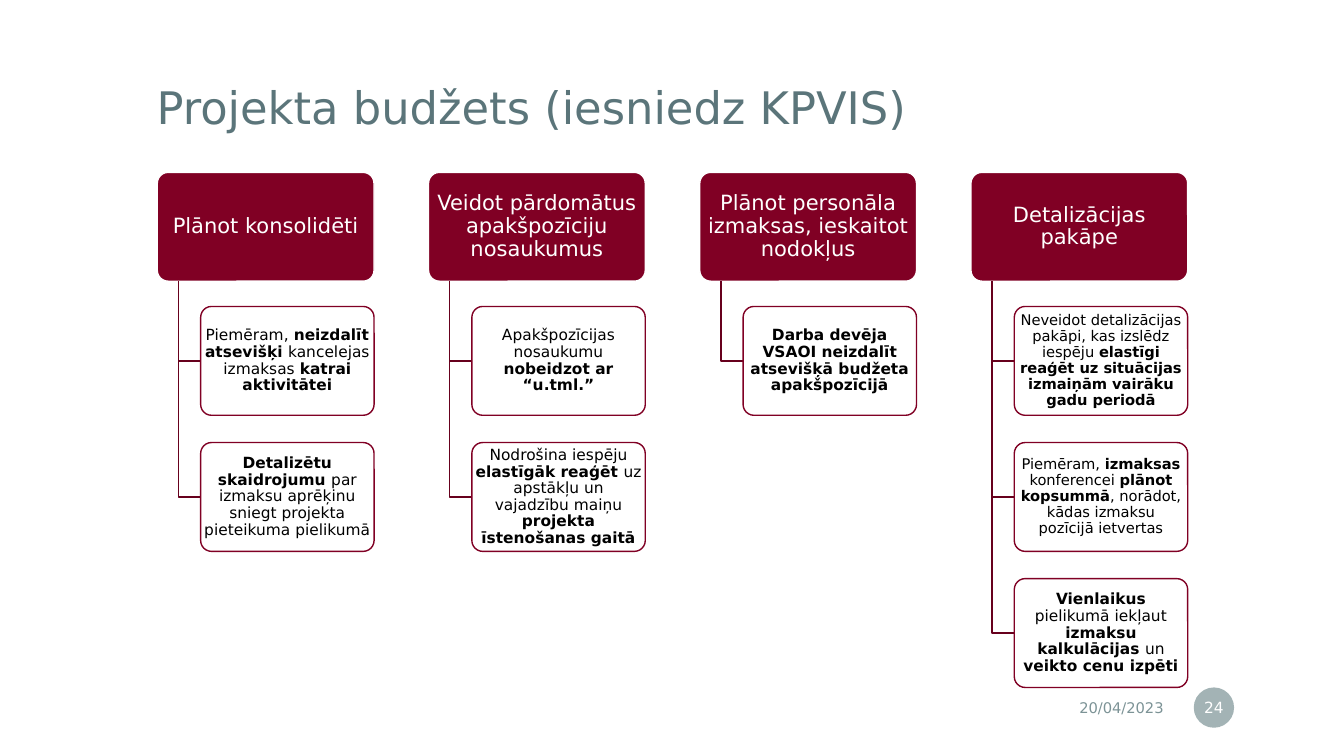
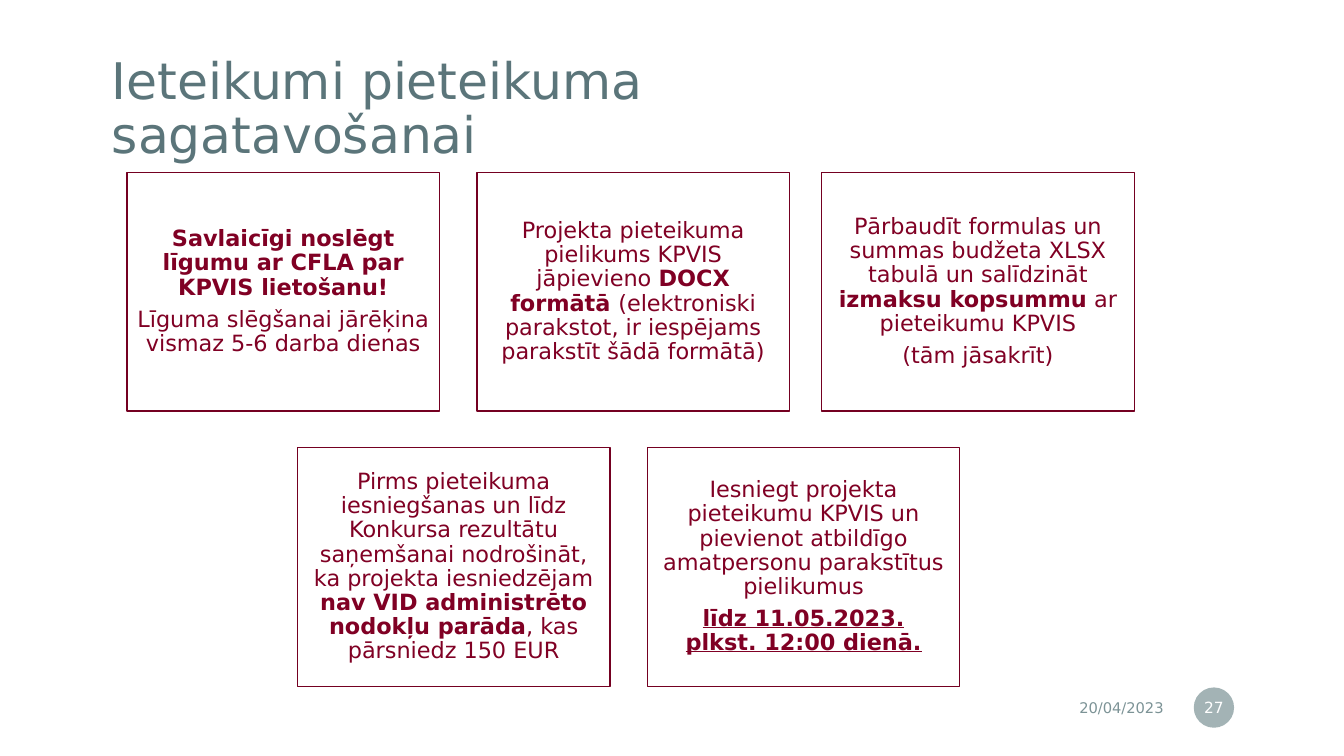
from lxml import etree
from pptx import Presentation
from pptx.dml.color import RGBColor
from pptx.enum.shapes import MSO_SHAPE
from pptx.enum.text import MSO_ANCHOR, MSO_AUTO_SIZE, PP_ALIGN
from pptx.oxml.ns import qn
from pptx.util import Inches, Pt

LEFT, CENTER, RIGHT = PP_ALIGN.LEFT, PP_ALIGN.CENTER, PP_ALIGN.RIGHT
MIDDLE, NO_FIT = MSO_ANCHOR.MIDDLE, MSO_AUTO_SIZE.NONE
RECTANGLE, ROUNDED, OVAL = MSO_SHAPE.RECTANGLE, MSO_SHAPE.ROUNDED_RECTANGLE, MSO_SHAPE.OVAL

WHITE = RGBColor(0xFF, 0xFF, 0xFF)
BLACK = RGBColor(0x00, 0x00, 0x00)
SLATE = RGBColor(0x5B, 0x75, 0x7A)
GREY = RGBColor(0x7C, 0x93, 0x96)
WINE = RGBColor(0x80, 0x00, 0x24)
WINE_BRANCH = RGBColor(0x67, 0x00, 0x1D)
WINE_BORDER = RGBColor(0x74, 0x00, 0x21)
FONT = "DejaVu Sans"


def write_text(shape, paragraphs, size, color, align=CENTER, margins=(0, 0), spacing=0.9, wrap=True):
    """Fill a shape with text; *stars* mark bold, _underscores_ underlined bold lines."""
    frame = shape.text_frame
    across, down = (Inches(margin) for margin in margins)
    frame_format = {"word_wrap": wrap, "auto_size": NO_FIT, "vertical_anchor": MIDDLE,
                    "margin_left": across, "margin_right": across,
                    "margin_top": down, "margin_bottom": down}
    for name, value in frame_format.items():
        setattr(frame, name, value)
    for index, text in enumerate(paragraphs):
        para = frame.add_paragraph() if index else frame.paragraphs[0]
        para.alignment = align
        para.line_spacing = spacing
        para.space_before = Pt(0.35 * size if index else 0)
        underlined = text.startswith("_")
        for line_index, line in enumerate(text.strip("_").split("\n")):
            if line_index:
                para.add_line_break()
            for part_index, part in enumerate(line.split("*")):
                if not part:
                    continue
                span = para.add_run()
                span.text = part
                span_format = {"name": FONT, "size": Pt(size), "underline": underlined,
                               "bold": underlined or part_index % 2 == 1}
                for name, value in span_format.items():
                    setattr(span.font, name, value)
                span.font.color.rgb = color


def add_box(page, kind, left, top, width, height, fill, line=None):
    """Add a flat preset shape with an optional one-point outline."""
    box = page.shapes.add_shape(kind, Inches(left), Inches(top), Inches(width), Inches(height))
    box.shadow.inherit = False
    box.fill.solid()
    box.fill.fore_color.rgb = fill
    if line is None:
        box.line.fill.background()
    else:
        box.line.color.rgb = line
        box.line.width = Pt(1)
    if kind == ROUNDED:
        box.adjustments[0] = 0.1
    return box


deck = Presentation()
deck.slide_width, deck.slide_height = Inches(13.33), Inches(7.5)

# Shared title, date and page number
headings = [
    ("Projekta budžets (iesniedz KPVIS)", "24",
     {"size": 32, "align": CENTER, "margins": (0, 0.2), "wrap": False}),
    ("Ieteikumi pieteikuma sagatavošanai", "27",
     {"size": 36, "align": LEFT, "margins": (0.2, 0.2)}),
]
for heading, number, title_format in headings:
    page = deck.slides.add_slide(deck.slide_layouts[5])
    title = page.shapes.title
    title.left, title.top = Inches(0.91), Inches(0.48)
    title.width, title.height = Inches(8.73), Inches(1.23)
    write_text(title, [heading], color=SLATE, **title_format)

    date = page.shapes.add_textbox(Inches(8.63), Inches(6.84), Inches(3.01), Inches(0.35))
    write_text(date, ["20/04/2023"], 10.5, GREY, RIGHT, (0.1, 0.05), 1.0)

    badge = add_box(page, OVAL, 11.84, 6.82, 0.4, 0.4, GREY)
    badge_color = badge.fill._xPr.find(qn("a:solidFill"))[0]
    etree.SubElement(badge_color, qn("a:alpha"), val="70000")
    write_text(badge, [number], 11, WHITE, CENTER, (0.02, 0.05), 1.0)

budget_page, advice_page = deck.slides

# Budget: four headers, each with its branch of detail boxes
COLUMN_LEFT, COLUMN_STEP = 1.56, 2.69
HEADER_TOP, HEADER_WIDTH, BOX_HEIGHT = 1.71, 2.15, 1.08
DETAIL_TOP, DETAIL_STEP, DETAIL_WIDTH = 3.04, 1.35, 1.72
TRUNK_INDENT, DETAIL_INDENT = 0.21, 0.43

columns = [
    ("Plānot konsolidēti", [
        ("Piemēram, *neizdalīt atsevišķi *kancelejas izmaksas *katrai aktivitātei*", 11),
        ("*Detalizētu skaidrojumu *par izmaksu aprēķinu sniegt projekta pieteikuma pielikumā", 11),
    ]),
    ("Veidot pārdomātus apakšpozīciju nosaukumus", [
        ("Apakšpozīcijas nosaukumu *nobeidzot ar “u.tml.”*", 11),
        ("Nodrošina iespēju *elastīgāk reaģēt *uz apstākļu un vajadzību maiņu "
         "*projekta īstenošanas gaitā*", 11),
    ]),
    ("Plānot personāla izmaksas, ieskaitot nodokļus", [
        ("*Darba devēja VSAOI neizdalīt atsevišķā budžeta apakšpozīcijā*", 11),
    ]),
    ("Detalizācijas pakāpe", [
        ("Neveidot detalizācijas pakāpi, kas izslēdz iespēju "
         "*elastīgi reaģēt uz situācijas izmaiņām vairāku gadu periodā*", 10.5),
        ("Piemēram, *izmaksas* konferencei *plānot kopsummā*, "
         "norādot, kādas izmaksu pozīcijā ietvertas", 10.5),
        ("*Vienlaikus* pielikumā iekļaut *izmaksu kalkulācijas *un *veikto cenu izpēti*", 11),
    ]),
]
for column, (header_text, details) in enumerate(columns):
    left = COLUMN_LEFT + column * COLUMN_STEP
    header = add_box(budget_page, ROUNDED, left, HEADER_TOP, HEADER_WIDTH, BOX_HEIGHT, WINE, WHITE)
    write_text(header, [header_text], 15, WHITE, margins=(0.03, 0.02))
    trunk_left, detail_left = left + TRUNK_INDENT, left + DETAIL_INDENT
    trunk_top = HEADER_TOP + BOX_HEIGHT
    for row, (detail_text, size) in enumerate(details):
        top = DETAIL_TOP + row * DETAIL_STEP
        middle = top + BOX_HEIGHT / 2
        builder = budget_page.shapes.build_freeform(Inches(trunk_left), Inches(trunk_top))
        builder.add_line_segments([(Inches(trunk_left), Inches(middle)),
                                   (Inches(detail_left), Inches(middle))], close=False)
        branch = builder.convert_to_shape()
        branch.shadow.inherit = False
        branch.fill.background()
        branch.line.color.rgb = WINE_BRANCH
        branch.line.width = Pt(1)
        detail = add_box(budget_page, ROUNDED, detail_left, top, DETAIL_WIDTH, BOX_HEIGHT, WHITE, WINE)
        write_text(detail, [detail_text], size, BLACK)

# Advice: three cards above two
CARD_WIDTH, CARD_HEIGHT = 3.1, 2.37
UPPER, LOWER = 1.71, 4.44
cards = [
    (1.26, UPPER, ["*Savlaicīgi noslēgt līgumu ar CFLA par KPVIS lietošanu!*",
                   "Līguma slēgšanai jārēķina vismaz 5-6 darba dienas"]),
    (4.73, UPPER, ["Projekta pieteikuma pielikums KPVIS jāpievieno *DOCX formātā *"
                   "(elektroniski parakstot, ir iespējams parakstīt šādā formātā)"]),
    (8.15, UPPER, ["Pārbaudīt formulas un summas budžeta XLSX tabulā un salīdzināt "
                   "*izmaksu kopsummu* ar pieteikumu KPVIS",
                   "(tām jāsakrīt)"]),
    (2.95, LOWER, ["Pirms pieteikuma iesniegšanas un līdz Konkursa rezultātu saņemšanai "
                   "nodrošināt, ka projekta iesniedzējam "
                   "*nav VID administrēto nodokļu parāda*, kas pārsniedz 150 EUR"]),
    (6.42, LOWER, ["Iesniegt projekta pieteikumu KPVIS un pievienot atbildīgo "
                   "amatpersonu parakstītus pielikumus",
                   "_līdz 11.05.2023.\nplkst. 12:00 dienā._"]),
]
for left, top, paragraphs in cards:
    card = add_box(advice_page, RECTANGLE, left, top, CARD_WIDTH, CARD_HEIGHT, WHITE, WINE_BORDER)
    write_text(card, paragraphs, 16, WINE, margins=(0.07, 0.07))

deck.save("out.pptx")
